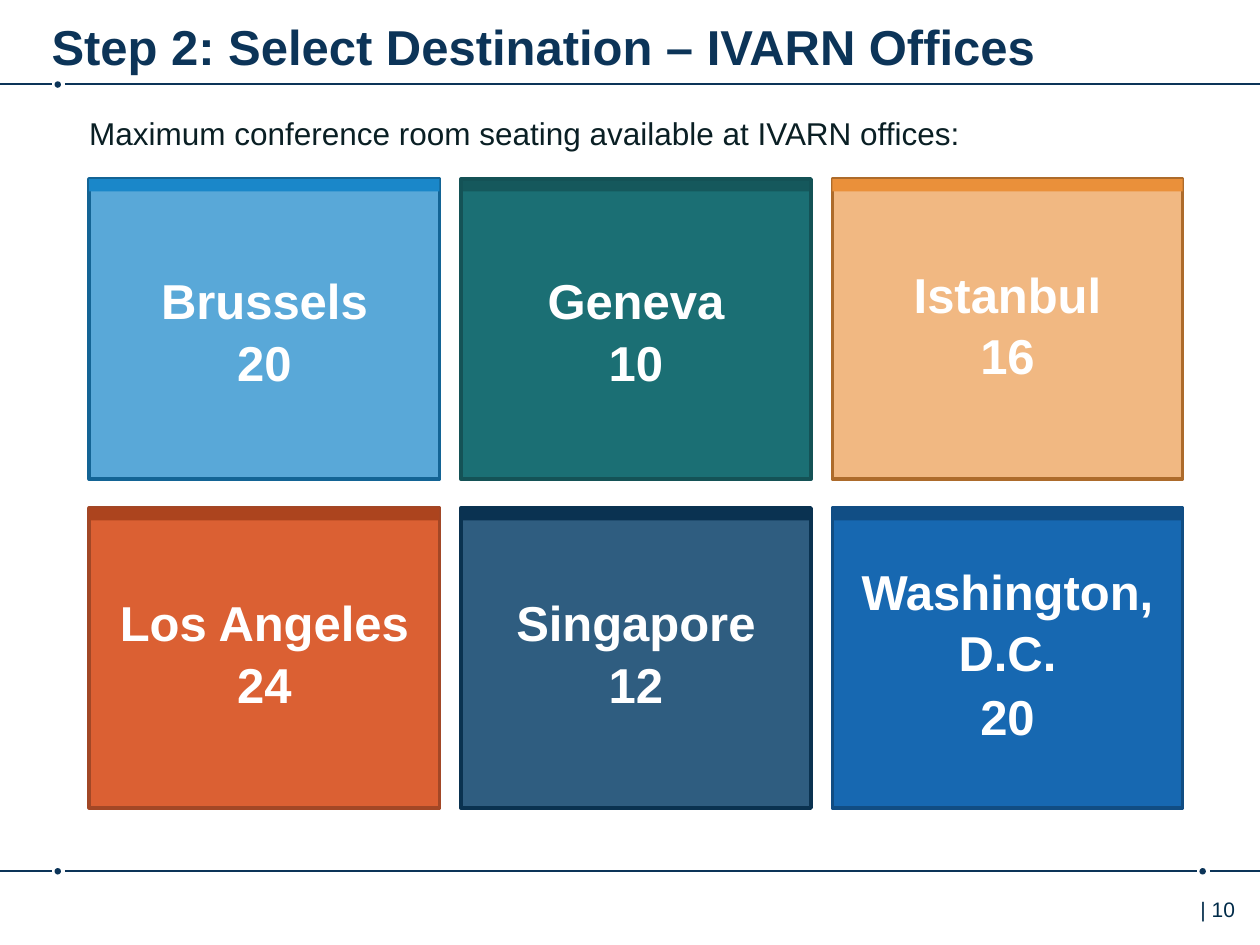
from lxml.etree import SubElement
from pptx import Presentation
from pptx.dml.color import RGBColor
from pptx.enum.shapes import MSO_CONNECTOR, MSO_SHAPE
from pptx.enum.text import MSO_ANCHOR, PP_ALIGN
from pptx.oxml.ns import qn
from pptx.util import Cm, Pt

NAVY = "0C3458"
WHITE = "FFFFFF"
CARD_WIDTH, CARD_HEIGHT, BAR_HEIGHT = 7.06, 6.05, 0.25
GRID_LEFT, GRID_TOP = 1.8, 3.61
COLUMN_STEP, ROW_STEP = 7.49, 6.63

OFFICES = [
    ("Brussels", "20", "1A87C9", 72, "136495", "1A87C9", 100, 0.25),
    ("Geneva", "10", "1B6F74", 100, "145256", "145357", 80, 0.25),
    ("Istanbul", "16", "EA903A", 63, "AD6B2B", "EA903A", 100, 0),
    ("Los Angeles", "24", "DB6033", 100, "A24726", "AC441E", 100, 0),
    ("Singapore", "12", "0D436C", 86, "0A3250", "0A3251", 100, 0),
    ("Washington, D.C.", "20", "1768B1", 100, "114D83", "114E85", 100, 0),
]


def paint(target, color, opacity=100):
    """Give a fill a solid colour with an opacity in percent."""
    target.solid()
    target.fore_color.rgb = RGBColor.from_string(color)
    if opacity < 100:
        solid = target._xPr.find(qn("a:solidFill"))
        SubElement(solid[0], qn("a:alpha"), val=str(opacity * 1000))


def write(para, text, size=28, color=WHITE, bold=False, align=PP_ALIGN.LEFT, before=0):
    """Write one formatted span into a paragraph."""
    para.alignment = align
    para.line_spacing = 1.05
    para.space_before = Pt(before)
    span = para.add_run()
    span.text = text
    span.font.name = "Arial"
    span.font.size = Pt(size)
    span.font.bold = bold
    paint(span.font.fill, color)


def set_margins(frame, left, top, right, bottom):
    """Set the four text insets in centimetres."""
    frame.word_wrap = True
    frame.margin_left, frame.margin_top = Cm(left), Cm(top)
    frame.margin_right, frame.margin_bottom = Cm(right), Cm(bottom)


class OfficePage:
    """Hold the style and the current slide."""

    def __init__(self, page, color):
        """Keep the slide and its rule colour."""
        self.page = page
        self.color = color

    def shape(self, kind, left, top, width, height, fill, opacity=100, border=None):
        """Add a preset shape without shadow."""
        shape = self.page.shapes.add_shape(kind, Cm(left), Cm(top), Cm(width), Cm(height))
        shape.shadow.inherit = False
        paint(shape.fill, fill, opacity)
        if border:
            paint(shape.line.fill, border)
            shape.line.width = Pt(2)
        else:
            shape.line.fill.background()
        return shape

    def rule(self, start, end, y):
        """Add a thin horizontal line."""
        line = self.page.shapes.add_connector(
            MSO_CONNECTOR.STRAIGHT, Cm(start), Cm(y), Cm(end), Cm(y))
        paint(line.line.fill, self.color)
        line.line.width = Pt(1)
        SubElement(line._element.spPr, qn("a:effectLst"))

    def dotted_rule(self, y, dots):
        """Add a full-width rule broken by dots."""
        starts = [0] + [dot + 0.15 for dot in dots]
        ends = [dot - 0.12 for dot in dots] + [25.4]
        for start, end in zip(starts, ends):
            self.rule(start, end, y)
        for dot in dots:
            self.shape(MSO_SHAPE.OVAL, dot - 0.06, y - 0.06, 0.13, 0.13, self.color)

    def text(self, text, left, top, width, height, margins, **style):
        """Add a text box with one paragraph."""
        box = self.page.shapes.add_textbox(Cm(left), Cm(top), Cm(width), Cm(height))
        set_margins(box.text_frame, *margins)
        write(box.text_frame.paragraphs[0], text, **style)

    def card(self, left, top, city, seats, fill, opacity, border, bar, bar_opacity, inset):
        """Add an office card with its top bar."""
        card = self.shape(MSO_SHAPE.RECTANGLE, left, top, CARD_WIDTH, CARD_HEIGHT,
                          fill, opacity, border)
        frame = card.text_frame
        set_margins(frame, 0.5, inset, 0.5, 0.25)
        frame.vertical_anchor = MSO_ANCHOR.MIDDLE
        style = {"bold": True, "align": PP_ALIGN.CENTER}
        write(frame.paragraphs[0], city, **style)
        write(frame.add_paragraph(), seats, before=1 if "," in city else 0, **style)
        self.shape(MSO_SHAPE.RECTANGLE, left, top, CARD_WIDTH, BAR_HEIGHT, bar, bar_opacity)


def main():
    """Build and save the slide."""
    deck = Presentation()
    deck.slide_width, deck.slide_height = Cm(25.4), Cm(19.05)
    page = OfficePage(deck.slides.add_slide(deck.slide_layouts[6]), NAVY)
    page.dotted_rule(1.7, [1.16])
    page.dotted_rule(17.56, [1.16, 24.24])
    page.text("| 10", 23.95, 17.91, 1.45, 1.02, (0.25, 0.13, 0, 0.13),
              size=12, color="002B49")
    page.text("Step 2: Select Destination – IVARN Offices", 1.04, 0.13, 22.25, 1.24,
              (0, 0.15, 0, 0), color=NAVY, bold=True)
    page.text("Maximum conference room seating available at IVARN offices:",
              1.8, 2.26, 19.2, 0.76, (0, 0, 0, 0), size=18, color="0A1F24")
    for index, office in enumerate(OFFICES):
        row, column = divmod(index, 3)
        page.card(GRID_LEFT + column * COLUMN_STEP, GRID_TOP + row * ROW_STEP, *office)
    deck.save("out.pptx")


if __name__ == "__main__":
    main()
